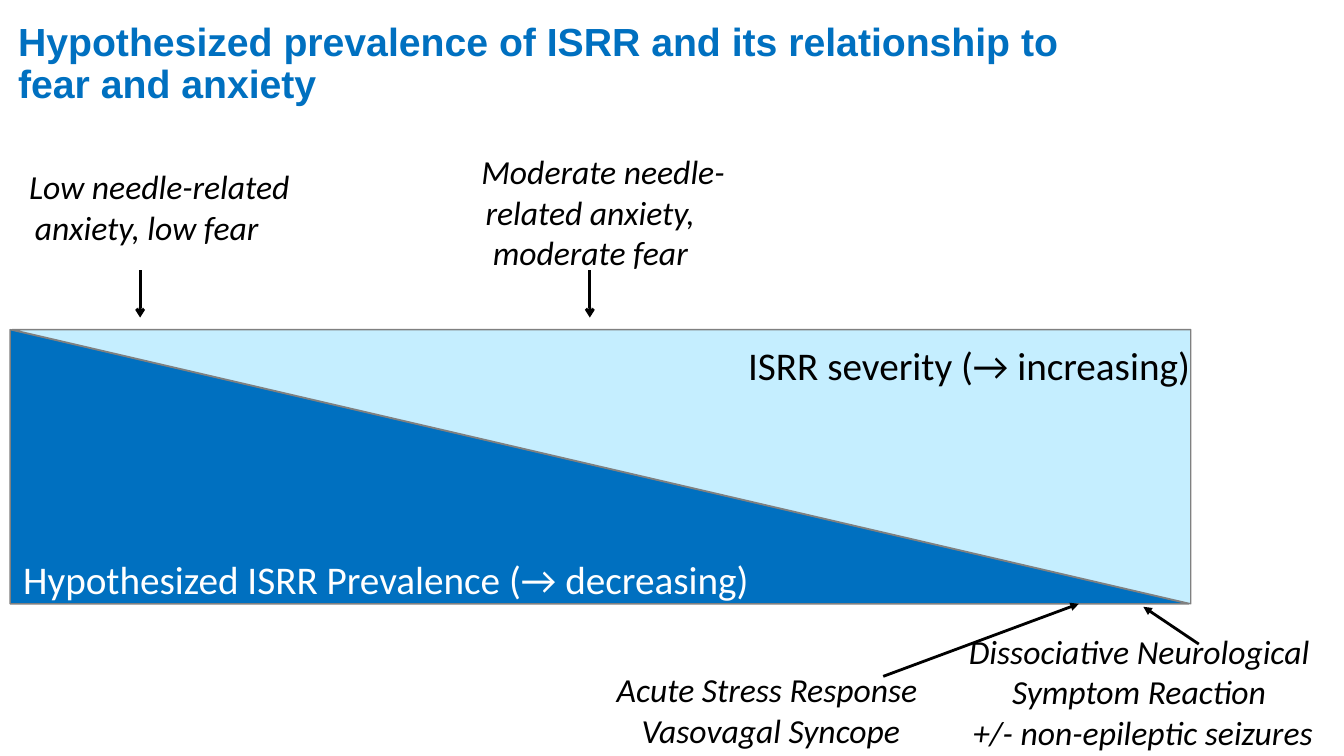
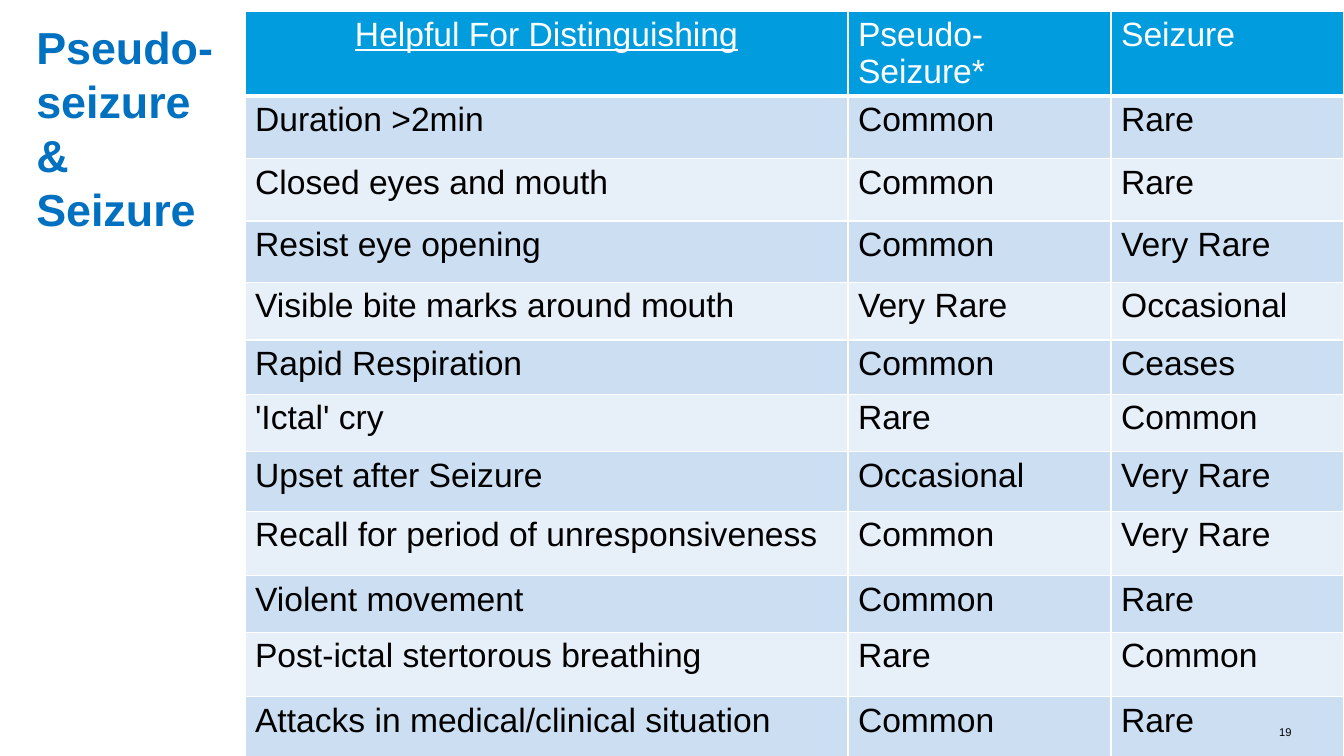
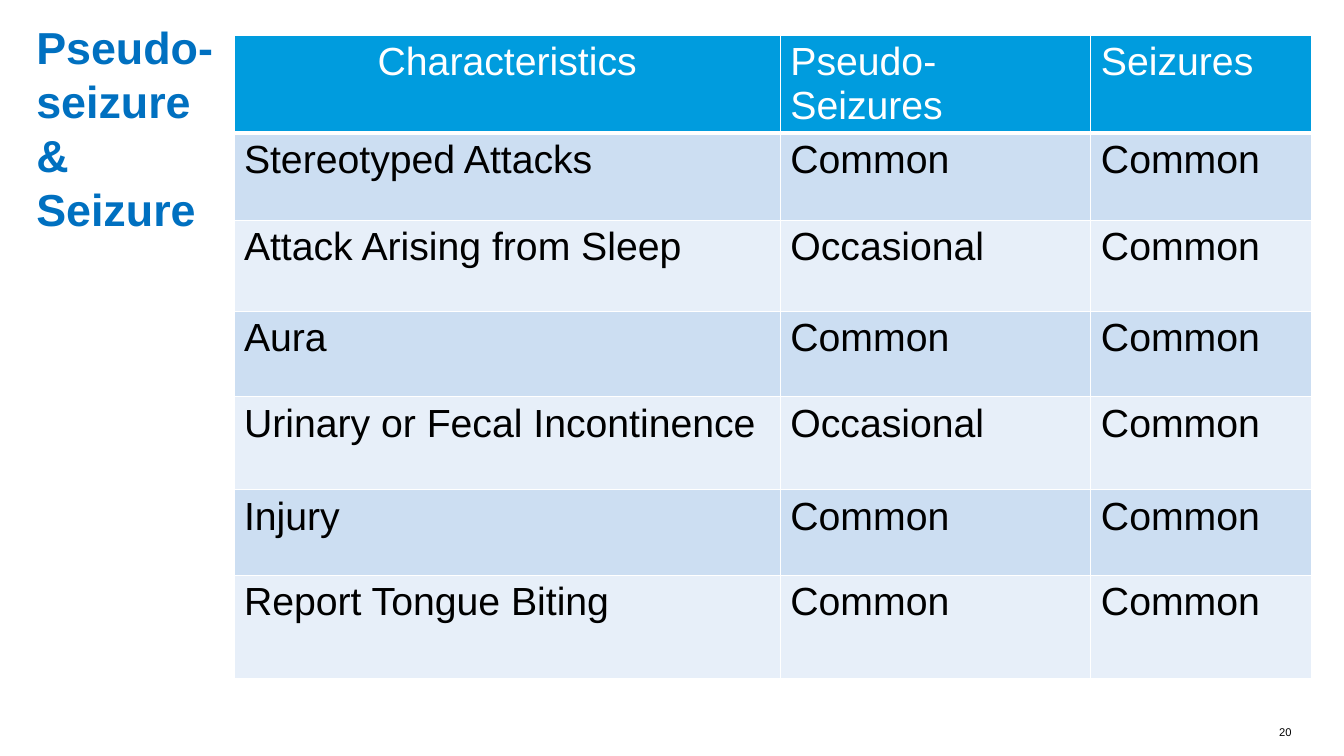
from lxml.etree import SubElement
from pptx import Presentation
from pptx.dml.color import RGBColor
from pptx.enum.shapes import MSO_CONNECTOR, MSO_SHAPE
from pptx.enum.text import MSO_ANCHOR, MSO_AUTO_SIZE, PP_ALIGN
from pptx.oxml.ns import qn
from pptx.util import Inches, Pt

BLUE, PALE, GREY = "0070C0", "C5EEFF", "808080"
HEAD, BANDS = "009CDE", ("E7EFF9", "CCDEF2")
BLACK, WHITE = "000000", "FFFFFF"
SIDE = (0.26, 0.15, 2.06, 2.26)

SIGNS = [
    ("Helpful For Distinguishing", "Pseudo-Seizure*", "Seizure"),
    ("Duration >2min", "Common", "Rare"),
    ("Closed eyes and mouth", "Common", "Rare"),
    ("Resist eye opening", "Common", "Very Rare"),
    ("Visible bite marks around mouth", "Very Rare", "Occasional"),
    ("Rapid Respiration", "Common", "Ceases"),
    ("'Ictal' cry", "Rare", "Common"),
    ("Upset after Seizure", "Occasional", "Very Rare"),
    ("Recall for period of unresponsiveness", "Common", "Very Rare"),
    ("Violent movement", "Common", "Rare"),
    ("Post-ictal stertorous breathing", "Rare", "Common"),
    ("Attacks in medical/clinical situation", "Common", "Rare"),
]
TRAITS = [
    ("Characteristics", "Pseudo-Seizures", "Seizures"),
    ("Stereotyped Attacks", "Common", "Common"),
    ("Attack Arising from Sleep", "Occasional", "Common"),
    ("Aura", "Common", "Common"),
    ("Urinary or Fecal Incontinence", "Occasional", "Common"),
    ("Injury", "Common", "Common"),
    ("Report Tongue Biting", "Common", "Common"),
]


def rgb(code):
    return RGBColor.from_string(code)


def inches(*sizes):
    return [Inches(size) for size in sizes]


def style(para, size, color, face="Arial", bold=False, italic=False):
    font = para.font
    font.name, font.size = face, Pt(size)
    font.bold, font.italic = bold, italic
    font.color.rgb = rgb(color)


def inset(frame, left, top, right, bottom):
    frame.margin_left, frame.margin_top, frame.margin_right, frame.margin_bottom = inches(
        left, top, right, bottom)


def add_title(slide, text, box, size, anchor, pads, space):
    title = slide.shapes.title
    title.left, title.top, title.width, title.height = inches(*box)
    frame = title.text_frame
    frame.text = text
    frame.word_wrap = True
    frame.auto_size = MSO_AUTO_SIZE.NONE
    frame.vertical_anchor = anchor
    inset(frame, *pads)
    para = frame.paragraphs[0]
    para.alignment = PP_ALIGN.LEFT
    para.line_spacing = space
    style(para, size, BLUE, bold=True)


def add_text(slide, lines, box, size, color=BLACK, face="Calibri", italic=False,
             align=PP_ALIGN.LEFT, space=1.0, indent=0):
    frame = slide.shapes.add_textbox(*inches(*box)).text_frame
    frame.word_wrap = True
    inset(frame, 0, 0, 0, 0)
    frame.text = "\n".join(lines)
    for para in frame.paragraphs:
        para.alignment = align
        para.line_spacing = space
        if indent:
            para._p.get_or_add_pPr().set("indent", str(Inches(indent)))
        style(para, size, color, face, italic=italic)


def add_arrow(slide, start, end, head):
    line = slide.shapes.add_connector(MSO_CONNECTOR.STRAIGHT, *inches(*start, *end))
    line.line.color.rgb = rgb(BLACK)
    line.line.width = Pt(2)
    SubElement(line.line._get_or_add_ln(), qn("a:tailEnd"), type=head)
    SubElement(line._element.spPr, qn("a:effectLst"))


def add_wedge(slide, box, fill, turn):
    wedge = slide.shapes.add_shape(MSO_SHAPE.RIGHT_TRIANGLE, *inches(*box))
    wedge.rotation = turn
    wedge.shadow.inherit = False
    wedge.fill.solid()
    wedge.fill.fore_color.rgb = rgb(fill)
    wedge.line.color.rgb = rgb(GREY)
    wedge.line.width = Pt(1)


def add_chart(slide, left, top, width, height):
    add_wedge(slide, (left, top, width, height), BLUE, 0)
    add_wedge(slide, (left + 0.02, top, width, height), PALE, 180)
    base = top + height
    add_text(slide, ["Hypothesized ISRR Prevalence (→ decreasing)"],
             (left + 0.13, base - 0.55, 8.14, 0.44), 28, WHITE, space=1.15)
    add_text(slide, ["ISRR severity (→ increasing)"],
             (left + 7.32, top + 0.05, 4.48, 0.37), 28, space=1.15)

    notes = [
        (["Low needle-related anxiety, low fear"], -0.1, top - 1.62, 2.91, 0.25),
        (["Moderate needle- related anxiety, moderate fear"], 4.3, top - 1.77, 2.91, 0.25),
        (["Acute Stress Response ", "Vasovagal Syncope"], 5.55, base + 0.65, 3.99, 0),
        (["Dissociative Neurological \vSymptom Reaction ", "+/- non-epileptic seizures"],
         9.24, base + 0.27, 3.99, 0),
    ]
    for lines, x, y, wide, indent in notes:
        add_text(slide, lines, (left + x, y, wide, 0.63), 24, italic=True,
                 align=PP_ALIGN.CENTER, indent=indent)

    for x in (left + 1.29, left + 5.75):
        add_arrow(slide, (x, top - 0.59), (x, top - 0.12), "arrow")
    add_arrow(slide, (left + 8.66, base + 0.72), (left + 10.6, base), "triangle")
    add_arrow(slide, (left + 11.79, base + 0.4), (left + 11.24, base + 0.03), "triangle")


def add_edges(cell, last):
    props = cell._tc.get_or_add_tcPr()
    for side in "LRTB":
        width = Pt(last if side == "B" else 1)
        edge = SubElement(props, qn(f"a:ln{side}"), w=str(width))
        fill = SubElement(edge, qn("a:solidFill"))
        SubElement(fill, qn("a:srgbClr"), val=WHITE)


def add_grid(slide, rows, left, top, widths, heights, size):
    box = inches(left, top, sum(widths), sum(heights))
    grid = slide.shapes.add_table(len(rows), len(widths), *box).table
    for col, width in zip(grid.columns, widths):
        col.width = Inches(width)
    for r, (row, height) in enumerate(zip(rows, heights)):
        grid.rows[r].height = Inches(height)
        for c, text in enumerate(row):
            cell = grid.cell(r, c)
            cell.text = text
            add_edges(cell, 1 if r else 3)
            cell.fill.solid()
            cell.fill.fore_color.rgb = rgb(BANDS[r % 2] if r else HEAD)
            style(cell.text_frame.paragraphs[0], size, BLACK if r else WHITE)
    first = grid.cell(0, 0).text_frame.paragraphs[0]
    first.alignment = PP_ALIGN.CENTER
    return first


def add_page(deck):
    return deck.slides.add_slide(deck.slide_layouts[5])


def table_page(deck, number, *grid):
    slide = add_page(deck)
    add_title(slide, "Pseudo-seizure & Seizure", SIDE, 32, MSO_ANCHOR.TOP,
              (0.1, 0.05, 0.1, 0.05), 1.0)
    first = add_grid(slide, *grid)
    add_text(slide, [number], (12.49, 7.2, 0.32, 0.2), 8, face="Arial",
             align=PP_ALIGN.RIGHT)
    return first


def main():
    deck = Presentation()
    deck.slide_width, deck.slide_height = inches(13.33, 7.5)

    slide = add_page(deck)
    add_title(slide, "Hypothesized prevalence of ISRR and its relationship to fear and anxiety",
              (0.16, -0.18, 10.98, 1.64), 28, MSO_ANCHOR.MIDDLE, (0.02, 0, 0.39, 0), 0.9)
    add_chart(slide, 0.1, 3.27, 11.69, 2.72)

    first = table_page(
        deck, "19", SIGNS, 2.43, 0.11, (5.98, 2.61, 2.31),
        (0.64, 0.62, 0.62, 0.61, 0.57, 0.54, 0.57, 0.59, 0.64, 0.56, 0.64, 0.8), 24)
    first.font.underline = True
    table_page(deck, "20", TRAITS, 2.32, 0.35, (5.42, 3.08, 2.19),
               (0.92, 0.87, 0.9, 0.85, 0.92, 0.85, 1.03), 28)
    deck.save("out.pptx")


if __name__ == "__main__":
    main()
